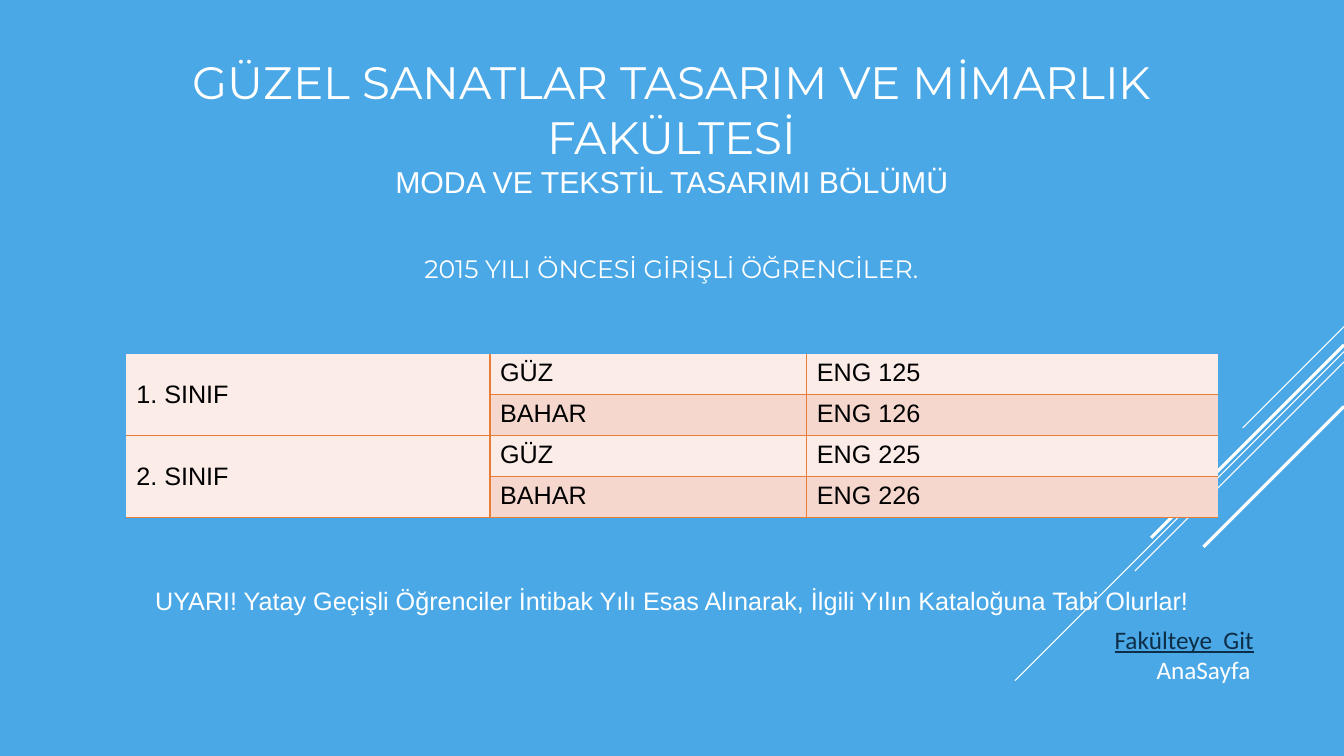
from lxml.etree import SubElement
from pptx import Presentation
from pptx.dml.color import RGBColor
from pptx.enum.shapes import MSO_CONNECTOR as Connector
from pptx.enum.text import MSO_ANCHOR as Anchor, MSO_AUTO_SIZE as AutoSize, PP_ALIGN as Align
from pptx.oxml import parse_xml
from pptx.oxml.ns import nsdecls, qn
from pptx.util import Cm, Pt

FACULTY = "GÜZEL SANATLAR TASARIM VE MİMARLIK FAKÜLTESİ"
DEPARTMENT = "MODA VE TEKSTİL TASARIMI BÖLÜMÜ"
COURSES = [
    ("1. SINIF", [("GÜZ", "ENG 125"), ("BAHAR", "ENG 126")]),
    ("2. SINIF", [("GÜZ", "ENG 225"), ("BAHAR", "ENG 226")]),
]
CAPTIONS = [
    ("UYARI! Yatay Geçişli Öğrenciler İntibak Yılı Esas Alınarak, İlgili Yılın Kataloğuna Tabi Olurlar!",
     (3.66, 14.63, 26.62), "Arial", "FFFFFF", Align.LEFT, True, False),
    ("2015 YILI ÖNCESİ GİRİŞLİ ÖĞRENCİLER.",
     (5.97, 6.27, 21.9), "Montserrat", "FFFFFF", Align.CENTER, True, False),
    ("AnaSayfa", (28.73, 16.36, 3.2), "Calibri", "FFFFFF", Align.CENTER, True, False),
    ("Fakülteye  Git", (27.84, 15.6, 4.11), "Calibri", "0D2E46", Align.LEFT, False, True),
]
DIAGONALS = [(8.23, 2.55, 0.75), (8.86, 8.29, 0.75), (9.12, 5.27, 0.75),
             (8.69, 4.86, 2.25), (10.24, 3.54, 2.25)]
SLIDE_WIDTH, SLIDE_HEIGHT = 33.87, 19.05
COLUMN_WIDTHS = [9.17, 7.98, 10.36]
ROW_HEIGHT = 1.03
BAND_COLORS = ["FBECE8", "F6D7CE"]
BORDER_COLOR = "E87D37"


def color(hex_code):
    return RGBColor.from_string(hex_code)


def set_font(font, name, size, hex_code):
    font.name, font.size = name, Pt(size)
    font.color.rgb = color(hex_code)


def set_borders(cell, visible):
    properties = cell._tc.get_or_add_tcPr()
    for position, side in enumerate("LRTB"):
        paint = (f'<a:solidFill><a:srgbClr val="{BORDER_COLOR}"/></a:solidFill>'
                 if side in visible else "<a:noFill/>")
        properties.insert(position, parse_xml(
            f'<a:ln{side} {nsdecls("a")} w="12700">{paint}</a:ln{side}>'))


def add_diagonals(slide):
    for top, reach, weight in DIAGONALS:
        diagonal = slide.shapes.add_connector(
            Connector.STRAIGHT, Cm(SLIDE_WIDTH), Cm(top),
            Cm(SLIDE_WIDTH - reach), Cm(top + reach))
        diagonal.line.color.rgb = color("FFFFFF")
        diagonal.line.width = Pt(weight)
        SubElement(diagonal._element.spPr, qn("a:effectLst"))


def add_heading(slide):
    heading = slide.shapes.title
    heading.left, heading.top, heading.width, heading.height = Cm(3.18), Cm(1.73), Cm(27.51), Cm(2.95)
    frame = heading.text_frame
    frame.auto_size, frame.word_wrap = AutoSize.NONE, True
    frame.vertical_anchor = Anchor.MIDDLE
    paragraph = frame.paragraphs[0]
    paragraph.alignment = Align.CENTER
    faculty = paragraph.add_run()
    faculty.text = FACULTY
    set_font(faculty.font, "Montserrat", 32.4, "FFFFFF")
    paragraph.add_line_break()
    department = paragraph.add_run()
    department.text = DEPARTMENT
    set_font(department.font, "Arial", 21.6, "FFFFFF")


def add_courses(slide):
    rows = [(year if term == 0 else "", *course)
            for year, courses in COURSES for term, course in enumerate(courses)]
    table = slide.shapes.add_table(
        len(rows), len(COLUMN_WIDTHS), Cm(3.18), Cm(8.92),
        Cm(sum(COLUMN_WIDTHS)), Cm(ROW_HEIGHT * len(rows))).table
    table.first_row = table.horz_banding = False
    for column, width in zip(table.columns, COLUMN_WIDTHS):
        column.width = Cm(width)
    last_row, last_column = len(rows) - 1, len(COLUMN_WIDTHS) - 1
    for r, texts in enumerate(rows):
        table.rows[r].height = Cm(ROW_HEIGHT)
        for c, text in enumerate(texts):
            cell = table.cell(r, c)
            cell.text = text
            set_font(cell.text_frame.paragraphs[0].font, "Arial", 18, "000000")
            cell.fill.solid()
            cell.fill.fore_color.rgb = color(BAND_COLORS[r % 2 if c else 0])
            inner = ("L" if c else "") + ("R" if c < last_column else "") + ("T" if r else "")
            set_borders(cell, inner + "B")
    for first in range(0, last_row, 2):
        year_cell = table.cell(first, 0)
        year_cell.merge(table.cell(first + 1, 0))
        year_cell.vertical_anchor = Anchor.MIDDLE


def add_captions(slide):
    for text, (left, top, width), font_name, hex_code, alignment, wraps, underlined in CAPTIONS:
        caption = slide.shapes.add_textbox(Cm(left), Cm(top), Cm(width), Cm(1.03))
        frame = caption.text_frame
        frame.word_wrap, frame.auto_size = wraps, AutoSize.SHAPE_TO_FIT_TEXT
        paragraph = frame.paragraphs[0]
        paragraph.text, paragraph.alignment = text, alignment
        set_font(paragraph.font, font_name, 18, hex_code)
        if underlined:
            paragraph.font.underline = True


def main():
    deck = Presentation()
    deck.slide_width, deck.slide_height = Cm(SLIDE_WIDTH), Cm(SLIDE_HEIGHT)
    slide = deck.slides.add_slide(deck.slide_layouts[5])
    slide.background.fill.solid()
    slide.background.fill.fore_color.rgb = color("4AA8E7")
    add_diagonals(slide)
    add_heading(slide)
    add_courses(slide)
    add_captions(slide)
    deck.save("out.pptx")


if __name__ == "__main__":
    main()
